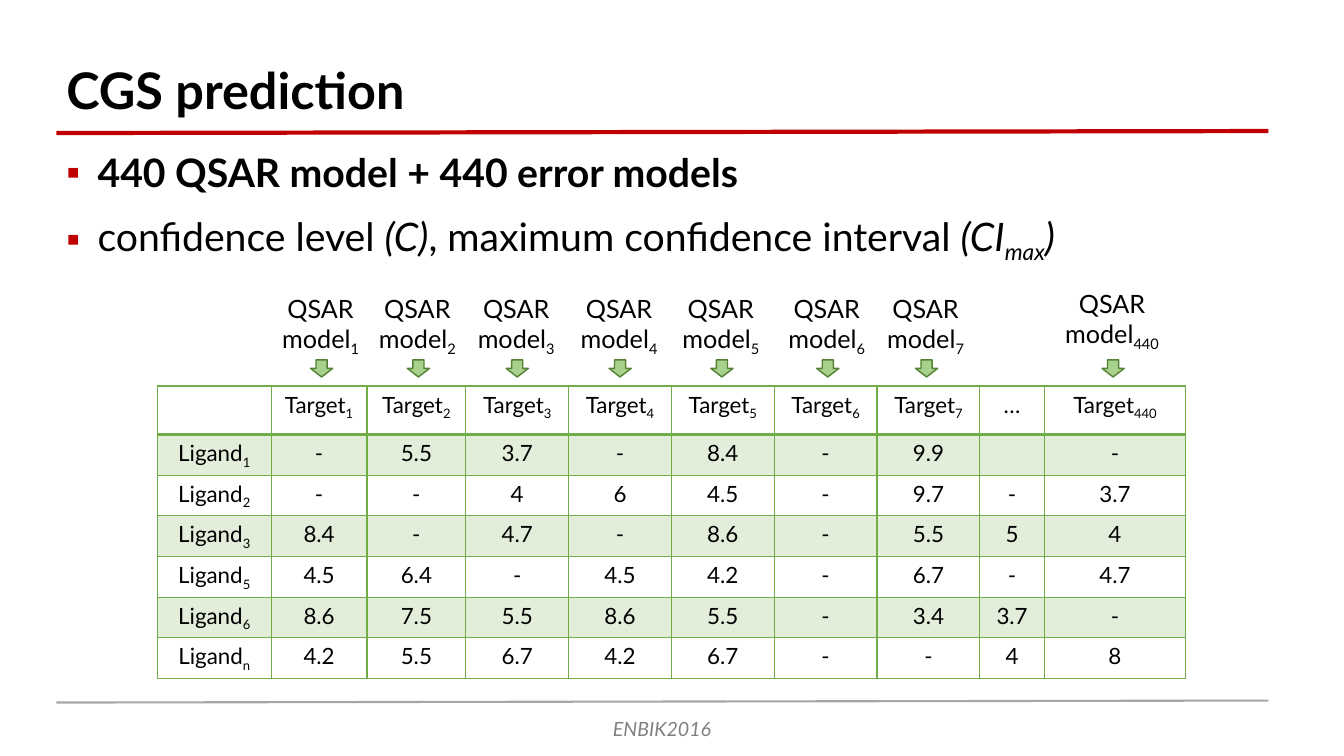
from dataclasses import dataclass

from lxml import etree
from pptx import Presentation
from pptx.dml.color import RGBColor
from pptx.enum.shapes import MSO_CONNECTOR, MSO_SHAPE
from pptx.enum.text import MSO_AUTO_SIZE, PP_ALIGN
from pptx.oxml.ns import qn
from pptx.util import Emu, Pt

LINE = MSO_CONNECTOR.STRAIGHT
DOWN_ARROW = MSO_SHAPE.DOWN_ARROW
CENTER, LEFT = PP_ALIGN.CENTER, PP_ALIGN.LEFT
FIT_SHAPE = MSO_AUTO_SIZE.SHAPE_TO_FIT_TEXT

PX = 9144  # 100 px to the inch
FONT = "Lato"
COLORS = {
    "text": "000000",
    "red": "C00000",
    "green": "70AD47",
    "arrow": "A9D18E",
    "arrow_line": "548235",
    "rule": "A6A6A6",
    "footer": "808080",
}


@dataclass(frozen=True)
class Run:
    text: str
    bold: bool = False
    italic: bool = False
    sub: bool = False


@dataclass(frozen=True)
class Model:
    index: str
    left: int
    top: int = 286
    width: int = 114


MODELS = [Model(str(i), left) for i, left in
          enumerate((261, 357, 455, 557, 658, 763, 861), 1)]
MODELS.append(Model("440", 1038, 281, 130))

BULLETS = [
    [Run("440 QSAR model + 440 error models", bold=True)],
    [Run("confidence level "), Run("(C)", italic=True),
     Run(", maximum confidence interval "), Run("(CI", italic=True),
     Run("max", italic=True, sub=True), Run(")", italic=True)],
]

COL_WIDTHS = [113, 95, 98, 102, 102, 102, 102, 102, 64, 140]
ROW_HEIGHTS = [48] + [39] * 6
TARGETS = ["1", "2", "3", "4", "5", "6", "7", "…", "440"]
LIGANDS = {
    "1": ["-", "5.5", "3.7", "-", "8.4", "-", "9.9", "", "-"],
    "2": ["-", "-", "4", "6", "4.5", "-", "9.7", "-", "3.7"],
    "3": ["8.4", "-", "4.7", "-", "8.6", "-", "5.5", "5", "4"],
    "5": ["4.5", "6.4", "-", "4.5", "4.2", "-", "6.7", "-", "4.7"],
    "6": ["8.6", "7.5", "5.5", "8.6", "5.5", "-", "3.4", "3.7", "-"],
    "n": ["4.2", "5.5", "6.7", "4.2", "6.7", "-", "-", "4", "8"],
}


def px(n: int) -> Emu:
    return Emu(n * PX)


def rgb(name: str) -> RGBColor:
    return RGBColor.from_string(COLORS[name])


def add_runs(p, runs: list[Run], size: int, color: str = "text", align=LEFT) -> None:
    p.alignment = align
    for run in runs:
        r = p.add_run()
        r.text = run.text
        r.font.name, r.font.size = FONT, Pt(size)
        r.font.bold, r.font.italic = run.bold, run.italic
        r.font.color.rgb = rgb(color)
        if run.sub:
            r.font._element.set("baseline", "-25000")


def add_text_frame(shapes, left: int, top: int, width: int, height: int, wrap: bool = True):
    tf = shapes.add_textbox(px(left), px(top), px(width), px(height)).text_frame
    tf.word_wrap = wrap
    tf.auto_size = FIT_SHAPE
    return tf


def add_rule(shapes, y: int, color: str, weight: float) -> None:
    line = shapes.add_connector(LINE, px(56), px(y), px(1258), px(y - 2))
    line.line.color.rgb = rgb(color)
    line.line.width = Pt(weight)
    etree.SubElement(line._element.spPr, qn("a:effectLst"))


def add_bullet(p) -> None:
    p.space_before = Pt(12)
    pPr = p._p.get_or_add_pPr()
    pPr.set("marL", str(px(31)))
    pPr.set("indent", str(px(-31)))
    color = etree.SubElement(pPr, qn("a:buClr"))
    etree.SubElement(color, qn("a:srgbClr"), val=COLORS["red"])
    etree.SubElement(pPr, qn("a:buFont"), typeface="Arial")
    etree.SubElement(pPr, qn("a:buChar"), char="▪")


def add_model(shapes, model: Model) -> None:
    group = shapes.add_group_shape().shapes
    tf = add_text_frame(group, model.left, model.top, model.width, 71)
    add_runs(tf.paragraphs[0], [Run("QSAR model"), Run(model.index, sub=True)], 18, align=CENTER)
    middle = model.left + model.width // 2
    arrow = group.add_shape(DOWN_ARROW, px(middle - 10), px(357), px(22), px(17))
    arrow.shadow.inherit = False
    arrow.fill.solid()
    arrow.fill.fore_color.rgb = rgb("arrow")
    arrow.line.color.rgb = rgb("arrow_line")
    arrow.line.width = Pt(1)


def style_cell(cell, header: bool, shaded: bool) -> None:
    tcPr = cell._tc.get_or_add_tcPr()
    for side in "LRTB":
        weight = Pt(2 if header and side == "B" else 1)
        ln = etree.SubElement(tcPr, qn(f"a:ln{side}"), w=str(weight))
        fill = etree.SubElement(ln, qn("a:solidFill"))
        etree.SubElement(fill, qn("a:srgbClr"), val=COLORS["green"])
    if shaded:
        cell.fill.solid()
        cell.fill.fore_color.rgb = rgb("green")
        color = tcPr.find(f"{qn('a:solidFill')}/{qn('a:srgbClr')}")
        etree.SubElement(color, qn("a:alpha"), val="20000")
    else:
        cell.fill.background()


def labelled(word: str, index: str) -> list[Run]:
    return [Run(word), Run(index, sub=True)]


def add_prediction_table(shapes) -> None:
    header = [[]] + [[Run(t)] if t == "…" else labelled("Target", t) for t in TARGETS]
    rows = [header]
    for index, values in LIGANDS.items():
        rows.append([labelled("Ligand", index)] + [[Run(v)] if v else [] for v in values])

    table = shapes.add_table(len(rows), len(COL_WIDTHS), px(156), px(383),
                             px(sum(COL_WIDTHS)), px(sum(ROW_HEIGHTS))).table
    table.first_row = table.horz_banding = False
    for col, width in zip(table.columns, COL_WIDTHS):
        col.width = px(width)
    for i, (row, height) in enumerate(zip(rows, ROW_HEIGHTS)):
        table.rows[i].height = px(height)
        for j, runs in enumerate(row):
            cell = table.cell(i, j)
            style_cell(cell, header=i == 0, shaded=i % 2 == 1)
            add_runs(cell.text_frame.paragraphs[0], runs, 16, align=CENTER)


def main() -> None:
    prs = Presentation()
    prs.slide_width, prs.slide_height = px(1333), px(750)
    s = prs.slides.add_slide(prs.slide_layouts[6])

    # Title
    tf = add_text_frame(s.shapes, 56, 54, 1010, 71)
    add_runs(tf.paragraphs[0], [Run("CGS prediction", bold=True)], 36)
    add_rule(s.shapes, 132, "red", 3)

    # Table of predictions
    add_prediction_table(s.shapes)

    # Bullets
    tf = add_text_frame(s.shapes, 56, 142, 1136, 121)
    for i, runs in enumerate(BULLETS):
        p = tf.add_paragraph() if i else tf.paragraphs[0]
        add_runs(p, runs, 28)
        add_bullet(p)

    # Models above the columns
    for model in MODELS:
        add_model(s.shapes, model)

    # Footer
    footer = s.shapes.add_group_shape().shapes
    add_rule(footer, 697, "rule", 1.5)
    tf = add_text_frame(footer, 598, 706, 119, 34, wrap=False)
    add_runs(tf.paragraphs[0], [Run("ENBIK2016", italic=True)], 14, "footer")

    prs.save("out.pptx")


if __name__ == "__main__":
    main()
